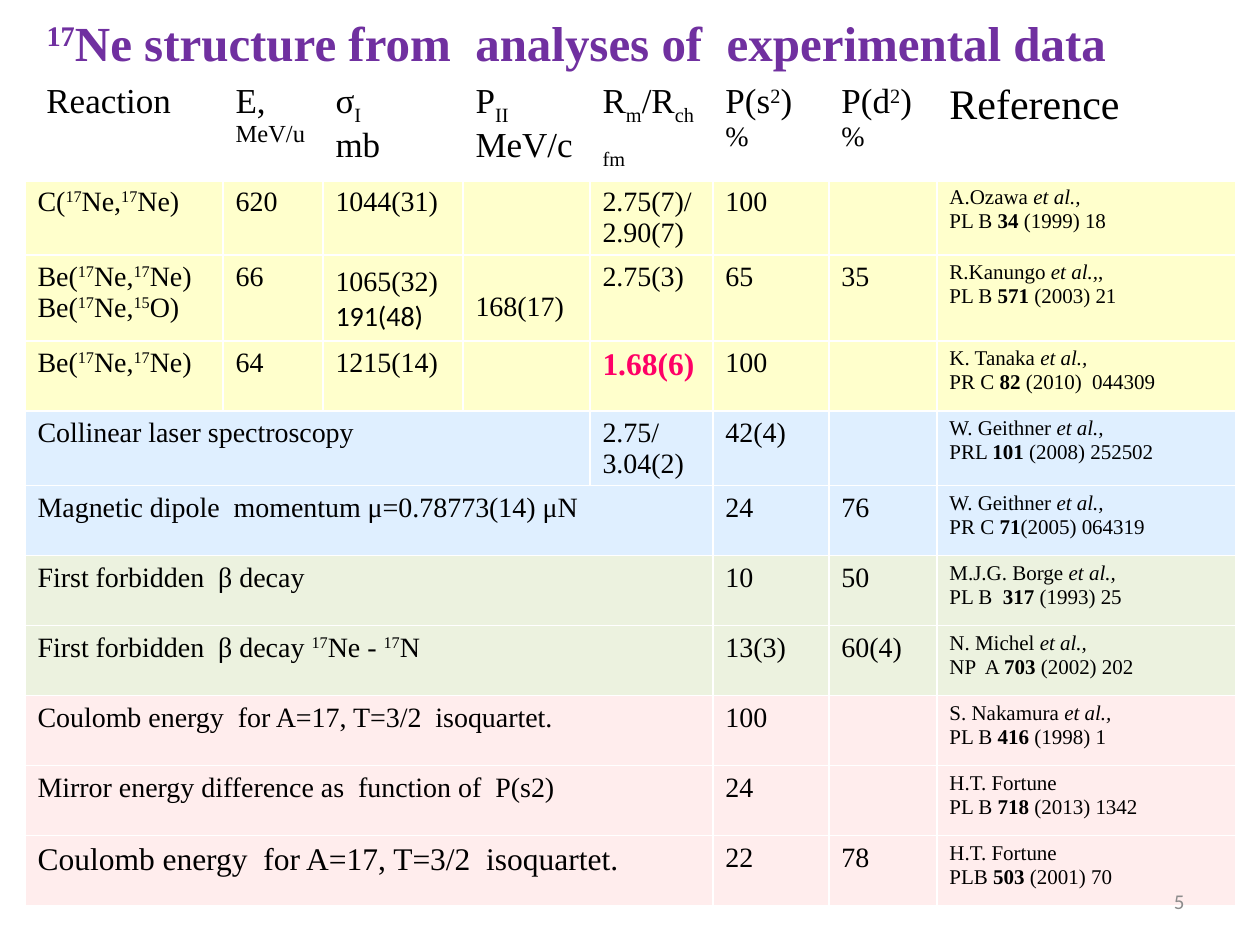
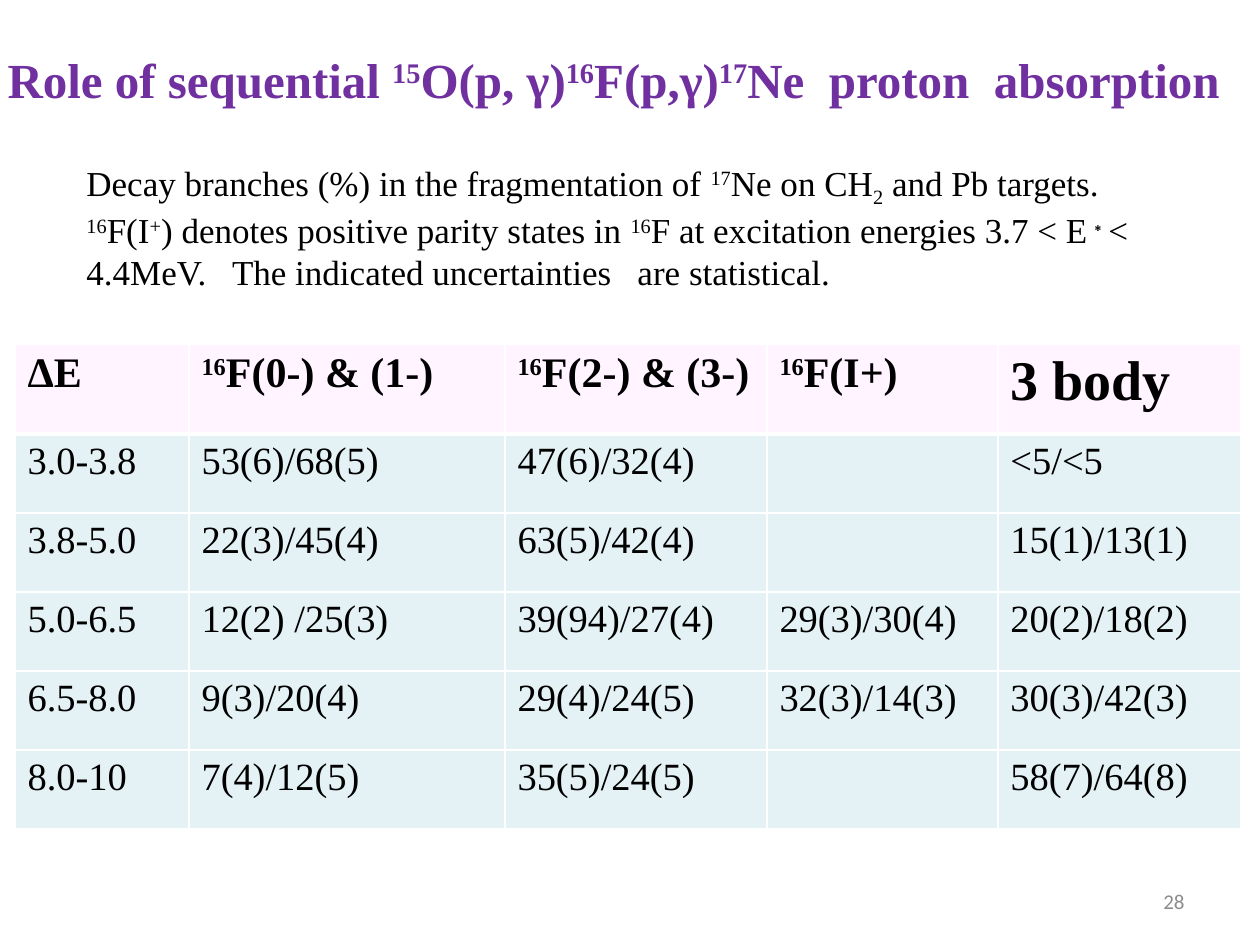
from itertools import takewhile
from lxml.etree import SubElement
from pptx import Presentation
from pptx.dml.color import RGBColor
from pptx.enum.text import MSO_ANCHOR, MSO_AUTO_SIZE, PP_ALIGN
from pptx.oxml.ns import qn
from pptx.util import Pt

TOP, MID = MSO_ANCHOR.TOP, MSO_ANCHOR.MIDDLE
LEFT, RIGHT = PP_ALIGN.LEFT, PP_ALIGN.RIGHT
FIXED = MSO_AUTO_SIZE.NONE
SCALE = 914400 / 126
SERIF, SANS = "Times New Roman", "Calibri"

INK = {
    "title": "7030A0", "text": "000000", "page": "8C8C8C", "hot": "FF0066",
    "line": "FFFFFF", "white": "FFFFFF", "yellow": "FFFF00", "blue": "99CCFF",
    "green": "9BBB59", "red": "FF0000", "pink": "FFCCFF", "aqua": "B7DEE8",
}
ALPHA = {"white": 31, "yellow": 20, "blue": 31, "green": 19, "red": 7, "pink": 20, "aqua": 37}

TITLE = {"name": SERIF, "size": 28, "bold": True, "color": "title"}
BODY = {"name": SERIF, "size": 20, "bold": False, "color": "text"}
PAGE = {"name": SANS, "size": 12, "bold": False, "color": "page"}

# Markup: ^super^  ~sub~  *bold*  |italic|  #size font#
DATA = [
    ("white", [" Reaction", "E, #14#MeV/u", "σ~I~\nmb", "P~II ~MeV/c", "R~m~/R~ch~\n~fm~",
               "P(s^2^)\n#16#%", "P(d^2^) #16#%", "#24#Reference"]),
    ("yellow", ["C(^17^Ne,^17^Ne)", "620", "1044(31)", "", "2.75(7)/\n2.90(7)", "100", "",
                "A.Ozawa |et al.,|\nPL B *34* (1999) 18"]),
    ("yellow", ["Be(^17^Ne,^17^Ne)\nBe(^17^Ne,^15^O)", "66",
                "1065(32)#18 Calibri# #16 Calibri#191(48)", "168(17)", "2.75(3)", "65", "35",
                "R.Kanungo |et al.,|,\nPL B *571* (2003) 21"]),
    ("yellow", ["Be(^17^Ne,^17^Ne)", "64", "1215(14)", "", "1.68(6)", "100", "",
                "K. Tanaka |et al.,|\nPR C *82* (2010)  044309"]),
    ("blue", ["Collinear laser spectroscopy", None, None, None, "2.75/\n3.04(2)", "42(4)", "",
              "W. Geithner |et al.,|\nPRL *101* (2008) 252502"]),
    ("blue", ["Magnetic dipole  momentum μ=0.78773(14) μN", None, None, None, None, "24", "76",
              "W. Geithner |et al.,|\nPR C *71*(2005) 064319"]),
    ("green", ["First forbidden  β decay", None, None, None, None, "10", "50",
               "M.J.G. Borge |et al.,|\nPL B  *317* (1993) 25"]),
    ("green", ["First forbidden  β decay ^17^Ne - ^17^N", None, None, None, None, "13(3)", "60(4)",
               "N. Michel |et al.,|\nNP  A *703* (2002) 202"]),
    ("red", ["Coulomb energy  for A=17, T=3/2  isoquartet.", None, None, None, None, "100", "",
             "S. Nakamura |et al.,|\nPL B *416 *(1998) 1"]),
    ("red", ["Mirror energy difference as  function of  P(s2)", None, None, None, None, "24", "",
             "H.T. Fortune\nPL B *718* (2013) 1342"]),
    ("red", ["#18#Coulomb energy  for A=17, T=3/2  isoquartet.", None, None, None, None, "22", "78",
             "H.T. Fortune\nPLB *503* (2001) 70"]),
]
DECAY = [
    ("pink", ["ΔE", "^16^F(0-) & (1-)", "^16^F(2-) & (3-)", "^16^F(I+)", "#32#3 body"]),
    ("aqua", ["3.0-3.8", "53(6)/68(5)", "47(6)/32(4)", "", "<5/<5"]),
    ("aqua", ["3.8-5.0", "22(3)/45(4)", "63(5)/42(4)", "", "15(1)/13(1)"]),
    ("aqua", ["5.0-6.5", "12(2) /25(3)", "39(94)/27(4)", "29(3)/30(4)", "20(2)/18(2)"]),
    ("aqua", ["6.5-8.0", "9(3)/20(4)", "29(4)/24(5)", "32(3)/14(3)", "30(3)/42(3)"]),
    ("aqua", ["8.0-10", "7(4)/12(5)", "35(5)/24(5)", "", "58(7)/64(8)"]),
]
NOTE = ("Decay branches (%) in the fragmentation of ^17^Ne on CH~2~ and Pb targets. "
        "^16^F(I^+^) denotes positive parity states in ^16^F at excitation energies "
        "3.7 < E^∗^< 4.4MeV.   The indicated uncertainties   are statistical.")

SLIDES = [
    {"title": "^17^Ne structure from  analyses of  experimental data",
     "box": (34, 6, 1191, 72), "wrap": True, "page": "5",
     "rows": DATA, "at": (25, 76), "wide": [198, 100, 140, 127, 123, 116, 108, 299],
     "high": [104, 73, 86, 70, 75] + [70] * 6,
     "head": {"size": 20}, "cell": {"size": 16}, "last": {"size": 12},
     "own": {(3, 4): {"size": 18, "bold": True, "color": "hot"}}, "drop": {(2, 3): 37}},
    {"title": "Role of sequential ^15^O(p, γ)^16^F(p,γ)^17^Ne  proton  absorption",
     "box": (-5, 43, 1278, 72), "wrap": False, "page": "28",
     "rows": DECAY, "at": (15, 344), "wide": [174, 316, 262, 231, 243],
     "high": [90] + [79] * 5,
     "head": {"size": 24, "bold": True}, "cell": {"size": 22}, "last": {},
     "own": {}, "drop": {}, "note": NOTE},
]


def px(n):
    return round(n * SCALE)


def style(run, look):
    for key, val in look.items():
        if key == "color":
            run.font.color.rgb = RGBColor.from_string(INK[val])
        elif key == "base":
            run._r.get_or_add_rPr().set("baseline", str(val * 1000))
        else:
            setattr(run.font, key, Pt(val) if key == "size" else val)


def pieces(text):
    marks = {"^": ("base", 30), "~": ("base", -25), "*": ("bold", True), "|": ("italic", True)}
    look, part = {}, ""
    for sign in text:
        if sign not in marks:
            part += sign
            continue
        if part:
            yield part, dict(look)
        key, val = marks[sign]
        if key in look:
            del look[key]
        else:
            look[key] = val
        part = ""
    if part:
        yield part, look


def write(frame, text, look, align=LEFT):
    for i, line in enumerate(text.split("\n")):
        para = frame.add_paragraph() if i else frame.paragraphs[0]
        para.alignment = align
        bits = line.split("#")
        spans = [("", bits[0])] + list(zip(bits[1::2], bits[2::2]))
        for code, words in spans:
            size, _, font = code.partition(" ")
            over = {"size": int(size)} if size else {}
            if font:
                over["name"] = font
            for part, extra in pieces(words):
                run = para.add_run()
                run.text = part
                style(run, {**look, **over, **extra})


def setup(frame, **vals):
    for key, val in vals.items():
        setattr(frame, key, val)


def place(shape, box):
    for key, val in zip(("left", "top", "width", "height"), box):
        setattr(shape, key, px(val))


def label(slide, box, text, look, align=LEFT, anchor=TOP):
    frame = slide.shapes.add_textbox(*map(px, box)).text_frame
    setup(frame, word_wrap=True, vertical_anchor=anchor)
    write(frame, text, look, align)


def paint(cell, tint, head):
    props = cell._tc.get_or_add_tcPr()
    for side in "LRTB":
        width = Pt(3 if head and side == "B" else 1)
        line = SubElement(props, qn("a:ln" + side), w=str(width))
        fill = SubElement(line, qn("a:solidFill"))
        SubElement(fill, qn("a:srgbClr"), val=INK["line"])
    cell.fill.solid()
    cell.fill.fore_color.rgb = RGBColor.from_string(INK[tint])
    SubElement(props[-1][0], qn("a:alpha"), val=str(ALPHA[tint] * 1000))


def grid(slide, page):
    rows, wide, high = page["rows"], page["wide"], page["high"]
    box = (*page["at"], sum(wide), sum(high))
    table = slide.shapes.add_table(len(rows), len(wide), *map(px, box)).table
    setup(table, first_row=False, horz_banding=False)
    for col, size in zip(table.columns, wide):
        col.width = px(size)
    for row, size in zip(table.rows, high):
        row.height = px(size)
    for r, (tint, texts) in enumerate(rows):
        for c, text in enumerate(texts):
            cell = table.cell(r, c)
            paint(cell, tint, r == 0)
            if text is None:
                continue
            span = len(list(takewhile(lambda t: t is None, texts[c + 1:])))
            if span:
                cell.merge(table.cell(r, c + span))
            look = {**BODY, **page["head" if r == 0 else "cell"]}
            if r and c == len(wide) - 1:
                look.update(page["last"])
            look.update(page["own"].get((r, c), {}))
            if (r, c) in page["drop"]:
                cell.margin_top = px(page["drop"][r, c])
            write(cell.text_frame, text, look)


def build(deck, page):
    slide = deck.slides.add_slide(deck.slide_layouts[5])
    title = slide.shapes.title
    place(title, page["box"])
    setup(title.text_frame, word_wrap=page["wrap"], vertical_anchor=TOP, auto_size=FIXED)
    write(title.text_frame, page["title"], TITLE)
    grid(slide, page)
    if "note" in page:
        label(slide, (74, 155, 1081, 140), page["note"], BODY)
    label(slide, (903, 876, 294, 50), page["page"], PAGE, RIGHT, MID)


def main():
    deck = Presentation()
    deck.slide_width, deck.slide_height = px(1260), px(945)
    for page in SLIDES:
        build(deck, page)
    deck.save("out.pptx")


if __name__ == "__main__":
    main()
